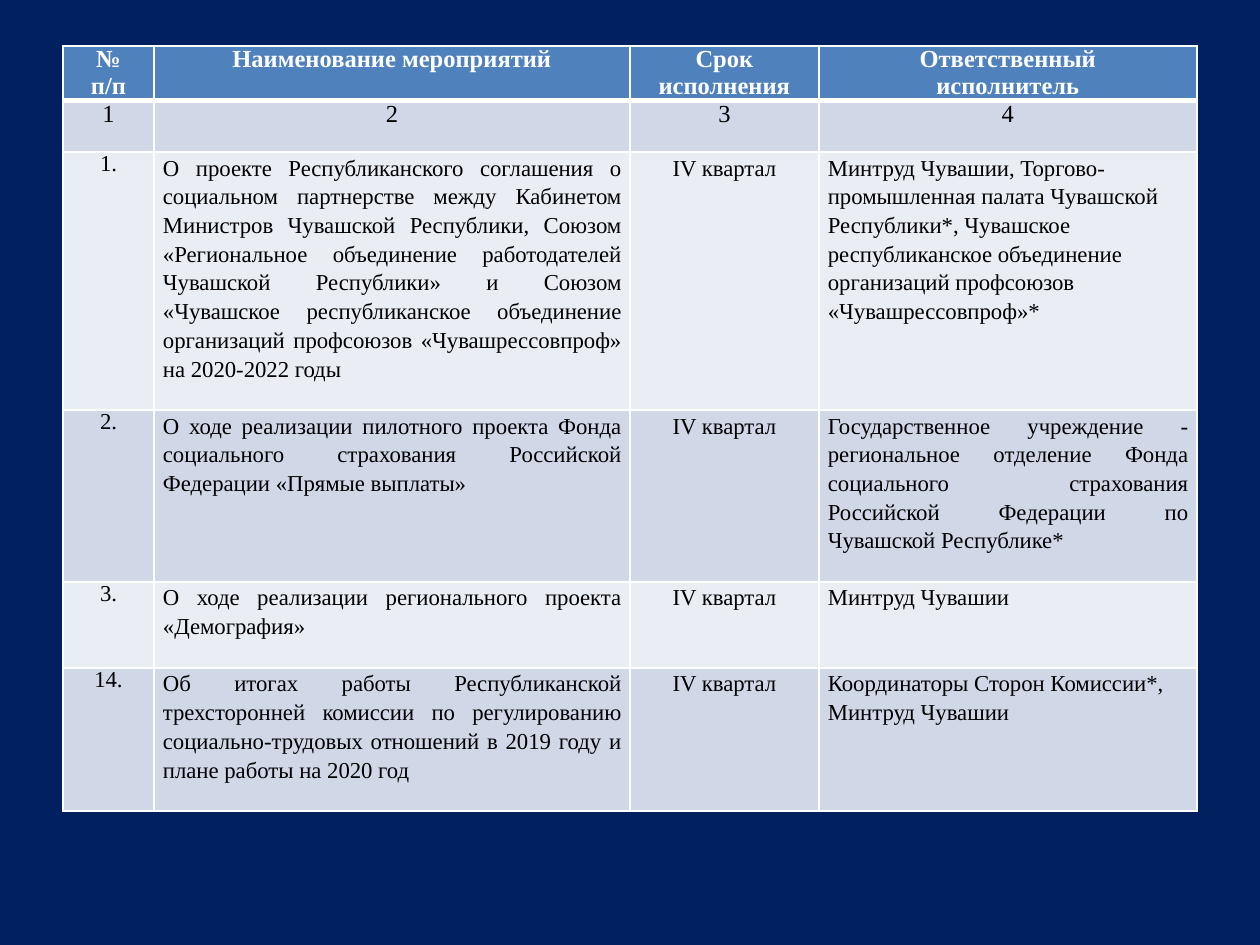
from pptx import Presentation
from pptx.util import Pt
from pptx.dml.color import RGBColor as RGB
from pptx.enum.text import PP_ALIGN as AL
from lxml.etree import SubElement as Sub
from pptx.oxml.ns import qn

PX = 914400 // 126
FONT = "Times New Roman"
COLS = [91, 476, 189, 378]
ROWS = [54, 52, 258, 172, 86, 143]
HUES = {"back": "002060", "head": "4F81BD", "dark": "D0D8E8",
        "light": "E9EDF4", "white": "FFFFFF", "black": "000000"}
TERM = "IV квартал"
DATA = [
    ["№\nп/п", "Наименование мероприятий", "Срок\nисполнения",
     "Ответственный\nисполнитель"],
    ["1", "2", "3", "4"],
    ["1.", "О проекте Республиканского соглашения о социальном партнерстве "
     "между Кабинетом Министров Чувашской Республики, Союзом «Региональное "
     "объединение работодателей Чувашской Республики» и Союзом «Чувашское "
     "республиканское объединение организаций профсоюзов "
     "«Чувашрессовпроф» на 2020-2022 годы", TERM,
     "Минтруд Чувашии, Торгово-промышленная палата Чувашской Республики*, "
     "Чувашское республиканское объединение организаций профсоюзов "
     "«Чувашрессовпроф»*"],
    ["2.", "О ходе реализации пилотного проекта Фонда социального страхования "
     "Российской Федерации «Прямые выплаты»", TERM,
     "Государственное учреждение - региональное отделение Фонда социального "
     "страхования Российской Федерации по Чувашской Республике*"],
    ["3.", "О ходе реализации регионального проекта «Демография»", TERM,
     "Минтруд Чувашии"],
    ["14.", "Об итогах работы Республиканской трехсторонней комиссии по "
     "регулированию социально-трудовых отношений в 2019 году и плане работы "
     "на 2020 год", TERM, "Координаторы Сторон Комиссии*, Минтруд Чувашии"],
]


def color(name):
    return RGB.from_string(HUES[name])


def edge(cell, sides):
    props = cell._tc.get_or_add_tcPr()
    for at, (side, width) in enumerate(sides.items()):
        line = Sub(props, qn("a:ln" + side), w=str(Pt(width)))
        fill = Sub(line, qn("a:solidFill"))
        Sub(fill, qn("a:srgbClr"), val=HUES["white"])
        props.insert(at, line)  # borders come before the fill


# Slide
prs = Presentation()
prs.slide_width, prs.slide_height = 1260 * PX, 945 * PX
slide = prs.slides.add_slide(prs.slide_layouts[6])
slide.background.fill.solid()
slide.background.fill.fore_color.rgb = color("back")

# Table grid
table = slide.shapes.add_table(len(ROWS), len(COLS), 63 * PX, 46 * PX,
                               sum(COLS) * PX, sum(ROWS) * PX).table
for col, wide in zip(table.columns, COLS):
    col.width = wide * PX
for row, high in zip(table.rows, ROWS):
    row.height = high * PX

# Cells
for r, texts in enumerate(DATA):
    head, body = r == 0, r > 1
    for c, text in enumerate(texts):
        cell = table.cell(r, c)
        cell.margin_left = cell.margin_right = 9 * PX
        cell.margin_top = cell.margin_bottom = 0
        cell.fill.solid()
        cell.fill.fore_color.rgb = color(
            "head" if head else "dark" if r % 2 else "light")
        edge(cell, {"L": 1, "R": 1, "T": 3 if r == 1 else 1,
                    "B": 3 if head else 1})

        # Text: names and hosts are justified, two host cells stay left
        frame = cell.text_frame
        for n, line in enumerate(text.split("\n")):
            para = frame.add_paragraph() if n else frame.paragraphs[0]
            para.alignment = AL.CENTER
            if body:
                para.line_spacing = 1.15 if c else 0.97
                if c in (1, 3):
                    left = c == 3 and r in (2, 5)
                    para.alignment = AL.LEFT if left else AL.JUSTIFY
            run = para.add_run()
            run.text = line
            run.font.name = FONT
            run.font.size = Pt(13 if body else 14)
            run.font.bold = head
            run.font.color.rgb = color("white" if head else "black")

prs.save("out.pptx")
